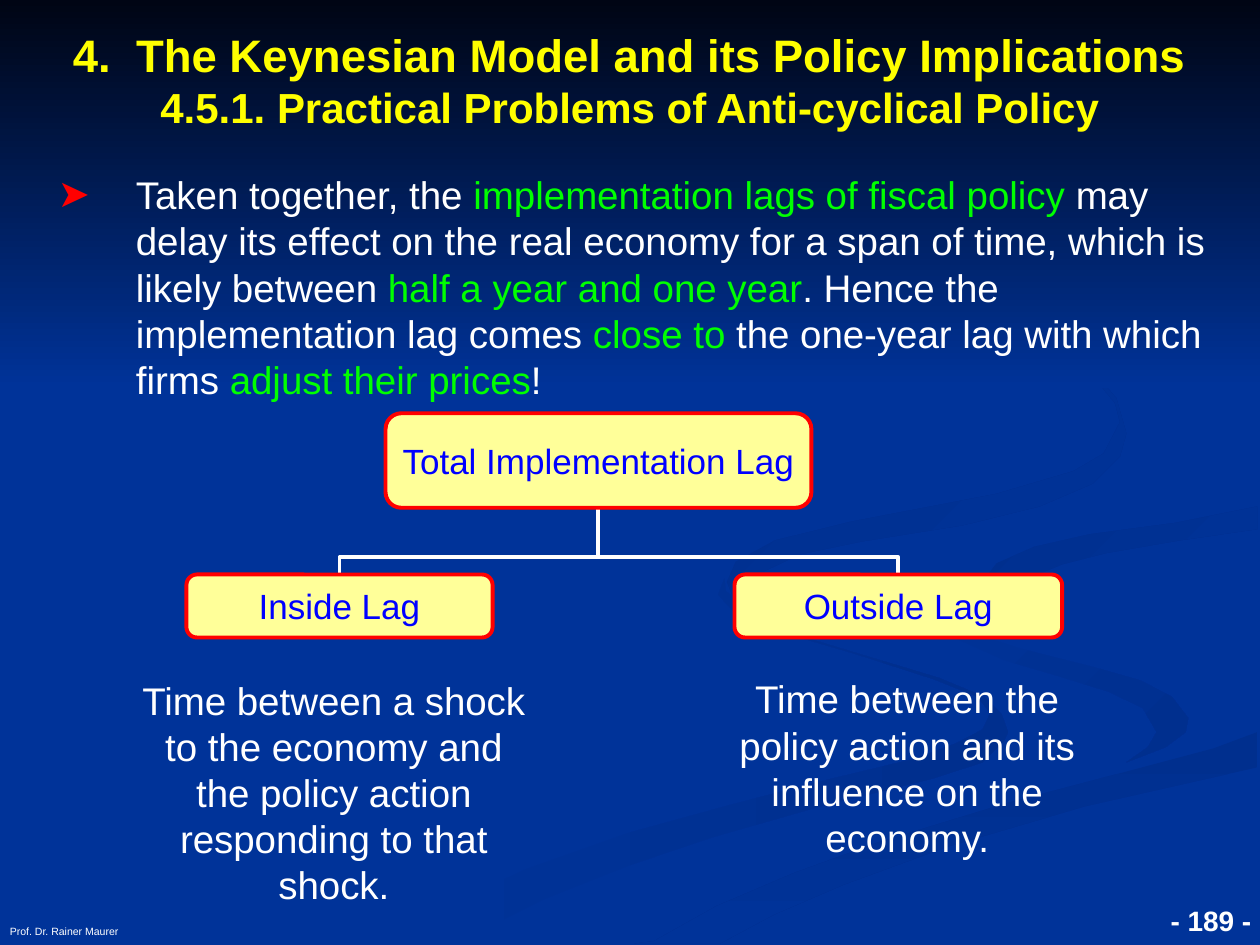
import pptx
import pptx.util
import pptx.dml.color
import pptx.enum.dml
import pptx.enum.shapes
import pptx.enum.text
import pptx.oxml
import pptx.oxml.ns
from dataclasses import dataclass
from typing import Any

Inches, Pt = pptx.util.Inches, pptx.util.Pt
Align = pptx.enum.text.PP_ALIGN
Anchor = pptx.enum.text.MSO_ANCHOR
Kind = pptx.enum.shapes.MSO_SHAPE
qn = pptx.oxml.ns.qn
COLS, ROWS = 100, 75


@dataclass(frozen=True)
class Theme:
    font: str = "Arial"
    back: str = "003399"
    dark: str = "000514"
    shade: str = "002F8E"
    text: str = "FFFFFF"
    mark: str = "00FF00"
    head: str = "FFFF00"
    box: str = "FFFF99"
    edge: str = "FF0000"
    label: str = "0000FF"
    title: int = 26
    sub: int = 24
    body: int = 22
    node: int = 20
    page: int = 16
    foot: int = 6
    line: float = 2.25


@dataclass(frozen=True)
class Area:
    x: float
    y: float
    w: float
    h: float


@dataclass(frozen=True)
class Run:
    text: str
    size: float
    color: str
    bold: bool = False


@dataclass(frozen=True)
class Node:
    area: Area
    text: str


@dataclass(frozen=True)
class Swirl:
    pts: list
    angle: int
    flip: bool = False


T = Theme()
deck = pptx.Presentation()
deck.slide_width, deck.slide_height = Inches(10), Inches(7.5)
slide = deck.slides.add_slide(deck.slide_layouts[6])
unit = deck.slide_width / COLS


def grid(*vals: float) -> list:
    return [round(v * unit) for v in vals]


def rgb(code: str) -> Any:
    return pptx.dml.color.RGBColor.from_string(code)


def apply(obj: Any, vals: dict) -> None:
    for key, val in vals.items():
        setattr(obj, key, val)


def blend(shape: Any, first: str, last: str, angle: int) -> None:
    shape.shadow.inherit = False
    shape.line.fill.background()
    shape.fill.gradient()
    shape.fill.gradient_angle = angle
    for stop, code in zip(shape.fill.gradient_stops, (first, last)):
        stop.color.rgb = rgb(code)


def write(frame: Any, paras: list, align: Any, **vals: Any) -> None:
    apply(frame, {"word_wrap": True, **vals})
    for i, runs in enumerate(paras):
        para = frame.paragraphs[0] if i == 0 else frame.add_paragraph()
        para.alignment = align
        for item in runs:
            run = para.add_run()
            run.text = item.text
            apply(run.font, {"name": T.font, "size": Pt(item.size), "bold": item.bold})
            run.font.color.rgb = rgb(item.color)


def note(area: Area, paras: list, align: Any, **vals: Any) -> Any:
    box = slide.shapes.add_textbox(*grid(area.x, area.y, area.w, area.h))
    write(box.text_frame, paras, align, **vals)
    return box.text_frame


def bullet(para: Any, sign: str, color: str, indent: float) -> None:
    props = para._p.get_or_add_pPr()
    props.set("marL", str(Inches(indent)))
    props.set("indent", str(-Inches(indent)))
    tint = pptx.oxml.ns.nsdecls("a")
    for xml in (f'<a:buClr {tint}><a:srgbClr val="{color}"/></a:buClr>',
                f'<a:buFont {tint} typeface="{T.font}"/>',
                f'<a:buChar {tint} char="{sign}"/>'):
        props.append(pptx.oxml.parse_xml(xml))


def swirl(item: Swirl) -> None:
    pts = [(x * 10, y * 10) for x, y in item.pts]
    form = slide.shapes.build_freeform(*pts[0], scale=unit / 10)
    form.add_line_segments(pts[1:], close=True)
    tones = (T.shade, T.back) if item.flip else (T.back, T.shade)
    blend(form.convert_to_shape(), *tones, item.angle)


def node(item: Node) -> None:
    a = item.area
    box = slide.shapes.add_shape(Kind.ROUNDED_RECTANGLE, *grid(a.x, a.y, a.w, a.h))
    box.shadow.inherit = False
    box.fill.solid()
    box.fill.fore_color.rgb = rgb(T.box)
    box.line.color.rgb = rgb(T.edge)
    box.line.width = Pt(T.line)
    write(box.text_frame, [[Run(item.text, T.node, T.label)]], Align.CENTER,
          word_wrap=False, vertical_anchor=Anchor.MIDDLE)


def branch(kid: Area, top: Area) -> None:
    x1, y1 = kid.x + kid.w / 2, kid.y
    x2, y2 = top.x + top.w / 2, top.y + top.h
    mx, my = (x1 + x2) / 2, (y1 + y2) / 2
    right = x1 > x2
    dx = (y1 - y2) / 2 * (1 if right else -1)
    dy = abs(x1 - x2) / 2
    link = slide.shapes.add_connector(pptx.enum.shapes.MSO_CONNECTOR.ELBOW,
                                      *grid(mx + dx, my - dy, mx - dx, my + dy))
    link.line.color.rgb = rgb(T.text)
    link.line.width = Pt(T.line)
    props = link._element.spPr
    props.find(qn("a:xfrm")).set("rot", str((90 if right else 270) * 60000))
    guide = pptx.oxml.parse_xml(f'<a:gd {pptx.oxml.ns.nsdecls("a")} name="adj1" fmla="val 25700"/>')
    props.find(qn("a:prstGeom")).get_or_add_avLst().append(guide)
    props.append(pptx.oxml.parse_xml(f'<a:effectLst {pptx.oxml.ns.nsdecls("a")}/>'))


SWIRLS = [
    Swirl([(78.1, 55.3), (74.5, 53.8), (68.2, 51.9), (62.6, 50.2), (59.4, 48.5), (57.6, 46.9),
           (57.5, 45.9), (57, 47.2), (58.1, 48.4), (61.1, 49.9), (67.9, 51.9), (74.1, 53.9),
           (77.6, 55.3), (78.6, 56.6), (78, 57.9), (75.9, 59), (72.7, 60.2), (65.2, 62),
           (57.9, 63.9), (49.9, 66.1), (41.7, 69), (33.8, 72.7), (30, 74.9), (36.1, 74.9),
           (43.1, 71.4), (49.9, 68.7), (56.4, 66.5), (65.1, 64), (74, 61.8), (78, 60.5),
           (79.7, 58.8), (80, 58.1), (79.5, 56.7)], 0),
    Swirl([(94.3, 57), (93, 55.3), (90.5, 54), (87, 53), (81.1, 51.5), (75.8, 49.8), (73.3, 48.3),
           (72.4, 46.4), (73, 48.4), (75.5, 50.5), (79.7, 52.4), (83.8, 53.6), (88, 54.9),
           (90.7, 56.2), (91.8, 58.1), (91.1, 59.3), (89.4, 60.5), (92.5, 59.3), (94.1, 58.1)], 315),
    Swirl([(51.9, 74.7), (50.3, 74.9), (57.1, 74.9), (61.4, 72.6), (67, 70.2), (75.2, 67.2),
           (86.1, 64), (99.8, 60.9), (99.8, 58.1), (96.3, 59.4), (90.3, 61), (79.7, 63.8),
           (69.6, 66.9), (63, 69.3), (56.9, 71.9)], 270, True),
    Swirl([(78.1, 46), (78.2, 46.9), (79.7, 48.3), (82.6, 49.6), (80.9, 48.4), (80.5, 47.2),
           (81.6, 45.9), (84.3, 44.8), (87.8, 43.9), (93.6, 42.9), (99.8, 42), (99.8, 40.2),
           (93.3, 41.5), (86.5, 42.4), (82.1, 43.4), (79.1, 44.7)], 315, True),
    Swirl([(68.3, 43), (76.4, 41.7), (82.5, 40.2), (86.7, 38.4), (88.9, 36.2), (89.4, 34.4),
           (88.6, 31.6), (86.4, 29.1), (82.1, 26.1), (76.2, 23.3), (82.6, 26.6), (86.2, 29.2),
           (88.5, 32), (88.9, 33.5), (87.6, 36), (85.2, 37.4), (79.1, 39.2), (67.6, 41.4),
           (61.5, 42.9), (58.4, 44.6), (57.7, 46.2), (58.4, 47.9), (62.2, 50), (60.1, 48.5),
           (59.3, 47), (60.1, 45.6), (63.5, 44)], 315, True),
]
BODY = ["Taken together, the ", "implementation lags of fiscal policy",
        " may delay its effect on the real economy for a span of time, which is likely between ",
        "half a year and one year", ". Hence the implementation lag comes ", "close to",
        " the one-year lag with which firms ", "adjust their prices", "!"]
ROOT = Node(Area(30.6, 32.8, 33.8, 7.5), "Total Implementation Lag")
KIDS = [Node(Area(14.8, 45.6, 24.3, 5), "Inside Lag"),
        Node(Area(58.3, 45.6, 26, 5), "Outside Lag")]
NOTES = [(Area(11.2, 52.5, 30.6, 19.5), "Time between a shock to the economy and the policy "
          "action responding to that shock."),
         (Area(56.7, 52.4, 30.6, 18.1), "Time between the policy action and its influence "
          "on the economy.")]


def main() -> None:
    slide.background.fill.solid()
    slide.background.fill.fore_color.rgb = rgb(T.back)
    for item in SWIRLS:
        swirl(item)
    sky = slide.shapes.add_shape(Kind.RECTANGLE, *grid(0, 0, COLS, 30.8))
    blend(sky, T.dark, T.back, 270)
    note(Area(77, 69.7, 23.3, 5.2), [[Run("- 189 -", T.page, T.text, True)]], Align.RIGHT,
         vertical_anchor=Anchor.BOTTOM)
    note(Area(-0.2, 69.7, 61.8, 5.2), [[Run("Prof. Dr. Rainer Maurer", T.foot, T.text)]],
         Align.LEFT, vertical_anchor=Anchor.BOTTOM)
    runs = [Run(s, T.body, T.mark if i % 2 else T.text) for i, s in enumerate(BODY)]
    text = note(Area(3.6, 13.1, 93.1, ROWS - 13.1), [runs], Align.LEFT)
    bullet(text.paragraphs[0], "➤", T.edge, 0.62)
    for kid in KIDS:
        branch(kid.area, ROOT.area)
    for item in [ROOT, *KIDS]:
        node(item)
    note(Area(0, 0.3, COLS, 12), [
        [Run("4.\u00a0 The Keynesian Model and its Policy Implications".replace("\u00a0", " "), T.title, T.head, True)],
        [Run("4.5.1. Practical Problems of Anti-cyclical Policy", T.sub, T.head, True)],
    ], Align.CENTER, vertical_anchor=Anchor.MIDDLE)
    for area, words in NOTES:
        note(area, [[Run(words, T.body, T.text)]], Align.CENTER,
             margin_left=0, margin_right=0, margin_top=Inches(0.12), margin_bottom=0)
    deck.save("out.pptx")


if __name__ == "__main__":
    main()
